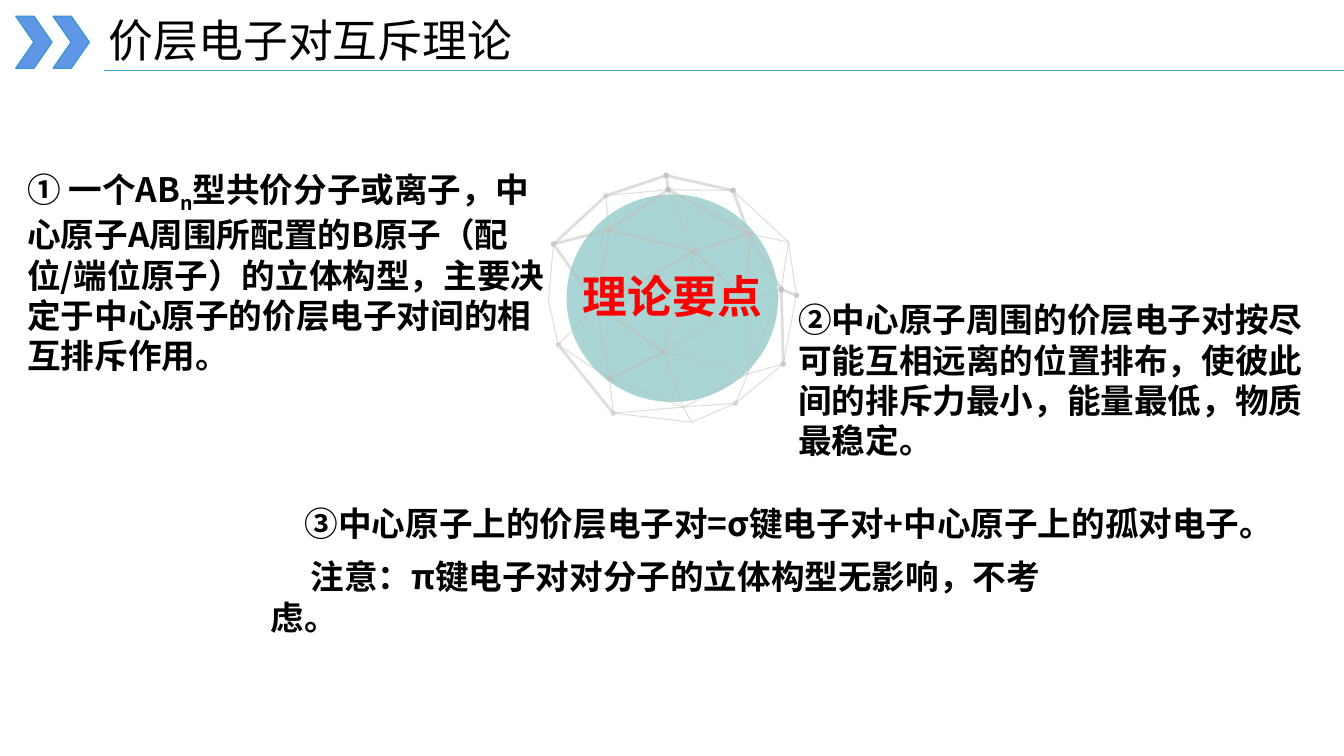
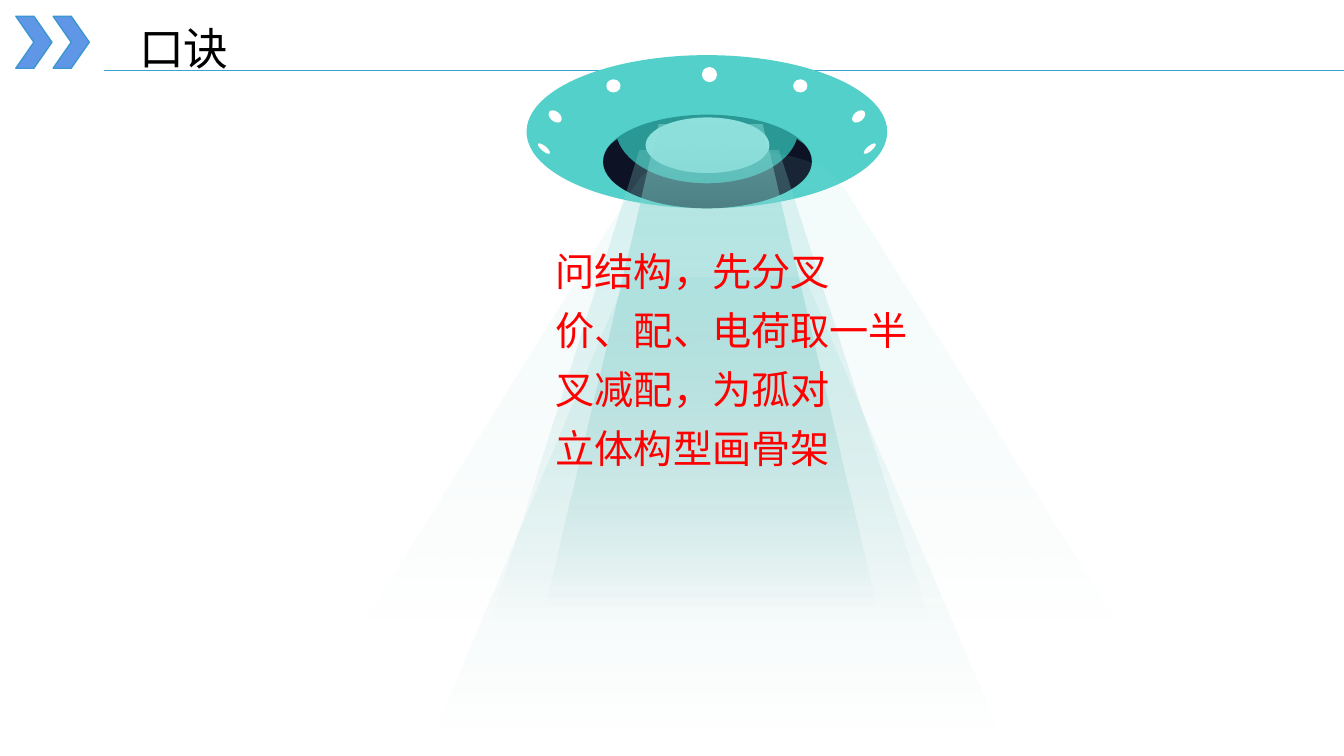
from pptx import Presentation
from pptx.dml.color import RGBColor
from pptx.enum.shapes import MSO_CONNECTOR, MSO_SHAPE
from pptx.enum.text import MSO_ANCHOR, MSO_AUTO_SIZE, PP_ALIGN
from pptx.oxml.ns import qn
from pptx.util import Cm, Pt
from lxml import etree

OVAL, CHEVRON = MSO_SHAPE.OVAL, MSO_SHAPE.CHEVRON
STRAIGHT = MSO_CONNECTOR.STRAIGHT
TOP, MIDDLE = MSO_ANCHOR.TOP, MSO_ANCHOR.MIDDLE
LEFT, CENTER, JUSTIFY = PP_ALIGN.LEFT, PP_ALIGN.CENTER, PP_ALIGN.JUSTIFY
FIXED = MSO_AUTO_SIZE.NONE

FONT = "Noto Sans CJK SC"
COLORS = {
    "ink": "000000", "red": "FF0000", "white": "FFFFFF",
    "arrow": "6096E6", "edge": "3B96D3", "rule": "3DA1D2",
    "net": "BFBFBF", "deep": "2A9995", "hull": "54D0CA",
    "lamp": "8EE0DC", "night": "0D1325",
}

# Mesh nodes in cm from the corner of the mesh
NODES = {
    "a": (4.65, 0.38), "b": (2.97, 0), "c": (6.25, 3.02), "d": (6.05, 1.68),
    "e": (1.63, 5.99), "f": (3.61, 6.22), "g": (4.72, 5.74), "h": (5.92, 4.75),
    "i": (0.25, 4.27), "j": (0.13, 1.73), "k": (0, 3.15), "l": (1.45, 0.51),
    "m": (3.02, 0.36), "n": (1.22, 3.28), "o": (1.55, 5.13), "p": (1.52, 1.37),
    "q": (2.9, 4.45), "r": (3.4, 5.84), "s": (3.68, 1.91), "t": (5.87, 2.87),
    "u": (5.05, 1.47), "v": (5.03, 5), "w": (5.03, 3.2),
}
# Each word is a run of nodes; a star is a dot at that end
EDGES = """*ab* *cda* efghc *ie* jki *bl* lma noe lpn* *qrf *msq* *bm* lj *ct*
*ua* *tu* *ht *qvh* *nq* *jn* *pj* *mp* *um* tdu *uwvt *su* *ns* *oin* *qo*
*twq* *gre orvg *sw* *ps*""".split()

# Outlines in cm from the corner of the saucer: pairs are corners,
# sixes are curves
RIM = [
    (6.81, 2.11), (6.99, 2.24), (7.11, 2.36, 7.19, 2.51, 7.19, 2.69),
    (7.19, 3.33, 5.99, 3.86, 4.55, 3.86), (3.1, 3.86, 1.93, 3.33, 1.93, 2.69),
    (1.93, 2.51, 2.01, 2.36, 2.13, 2.24), (2.29, 2.11), (2.29, 2.13),
    (2.51, 2.77, 3.43, 3.23, 4.55, 3.23), (5.66, 3.23, 6.6, 2.77, 6.81, 2.13),
]
RAYS = (
    ([(5.31, 2.41), (6.58, 2.41, 7.65, 2.77, 7.87, 3.25), (7.95, 3.28),
      (15.24, 14.88), (-4.45, 14.88), (2.74, 3.28), (2.77, 3.25),
      (3, 2.77, 4.06, 2.41, 5.31, 2.41)], 10),
    ([(2.51, 5.61), (7.01, 5.61), (12.01, 17.3), (-2.41, 17.3)], 17),
    ([(2.84, 2.41), (6.35, 2.41), (10.24, 14.5), (-0.99, 14.5)], 27),
    ([(3.33, 1.75), (5.94, 1.75), (8.84, 14), (0.46, 14)], 47),
)


def paint(color):
    return RGBColor.from_string(COLORS[color])


def fade(color, alpha):
    """Set the opacity, in percent, of one colour element."""
    etree.SubElement(color, qn("a:alpha")).set("val", str(alpha * 1000))


def write(frame, paras, size=24, color="ink", bold=False, align=LEFT,
          space=1.0, indent=0, anchor=TOP):
    """Fill a frame; text between underscores is set as subscript."""
    frame.word_wrap, frame.auto_size = True, FIXED
    frame.vertical_anchor = anchor
    for n, text in enumerate(paras):
        para = frame.add_paragraph() if n else frame.paragraphs[0]
        para.alignment, para.line_spacing = align, space
        para.space_before = para.space_after = Pt(0)
        props = para._p.get_or_add_pPr()
        props.set("marL", "0")
        props.set("indent", str(Cm(indent)))
        etree.SubElement(props, qn("a:buNone"))
        for k, part in enumerate(text.split("_")):
            run = para.add_run()
            run.text = part
            font = run.font
            font.name, font.size, font.bold = FONT, Pt(size), bold
            font.color.rgb = paint(color)
            rpr = run._r.get_or_add_rPr()
            etree.SubElement(rpr, qn("a:ea")).set("typeface", FONT)
            if k % 2:
                rpr.set("baseline", "-25000")


def place(shape, box):
    shape.left, shape.top, shape.width, shape.height = map(Cm, box)
    return shape


def label(slide, box, text, **style):
    write(slide.shapes.add_textbox(*map(Cm, box)).text_frame, [text], **style)


def solid(slide, kind, box, color, turn=0):
    shape = slide.shapes.add_shape(kind, *map(Cm, box))
    shape.shadow.inherit = False
    shape.fill.solid()
    shape.fill.fore_color.rgb = paint(color)
    shape.line.fill.background()
    shape.rotation = turn
    return shape


def stroke(slide, start, end, color, width):
    line = slide.shapes.add_connector(STRAIGHT, *map(Cm, start + end))
    line.line.color.rgb, line.line.width = paint(color), Pt(width)
    etree.SubElement(line.element.spPr, qn("a:effectLst"))
    return line


def trace(slide, left, top, parts, close=True):
    """Draw an outline of corners and curves, placed from left and top."""
    first, *rest = [(Cm(left + part[k]), Cm(top + part[k + 1]))
                    for part in parts for k in range(0, len(part), 2)]
    pen = slide.shapes.build_freeform(*first)
    pen.add_line_segments(rest, close=close)
    shape = pen.convert_to_shape()
    shape.shadow.inherit = False
    steps = iter(list(shape.element.iter(qn("a:lnTo"))))
    for part in parts[1:]:
        step = next(steps)
        if len(part) == 6:
            step.tag = qn("a:cubicBezTo")
            for _ in range(2):
                extra = next(steps)
                step.append(extra[0])
                extra.getparent().remove(extra)
    return shape


# Band shared by all slides, kept on the master
def band(prs, slide):
    parts = []
    for n in range(2):
        mark = solid(slide, CHEVRON, (0.4 + 0.94 * n, 0.41, 0.91, 1.31),
                     "arrow")
        mark.line.color.rgb, mark.line.width = paint("edge"), Pt(1)
        parts.append(mark)
    parts.append(stroke(slide, (2.62, 1.78), (33.87, 1.78), "rule", 0.5))
    for n, part in enumerate(parts):
        part.element.xpath(".//p:cNvPr")[0].set("id", str(20 + n))
        prs.slide_master.shapes.element.append(part.element)


def head(slide, box, text):
    title = place(slide.shapes.title, box)
    write(title.text_frame, [text], size=32, anchor=MIDDLE)


# Mesh globe with a caption
def globe(slide, left, top):
    disc = (left + 0.46, top + 0.48, 5.33, 5.23)
    ball = solid(slide, OVAL, disc, "deep")
    fade(next(ball.element.spPr.iter(qn("a:srgbClr"))), 40)
    for edge in EDGES:
        points = [NODES[c] for c in edge.strip("*")]
        if len(points) == 2:
            ends = [(left + x, top + y) for x, y in points]
            wire = stroke(slide, *ends, "net", 0)
        else:
            wire = trace(slide, left, top, points, close=False)
            wire.fill.background()
            wire.line.color.rgb, wire.line.width = paint("net"), Pt(0)
        pen = wire.line._get_or_add_ln()
        fade(next(pen.iter(qn("a:srgbClr"))), 50)
        for tag, dot in (("a:headEnd", edge[0]), ("a:tailEnd", edge[-1])):
            if dot == "*":
                etree.SubElement(pen, qn(tag), type="oval", w="sm", len="sm")
    label(slide, (left + 0.46, top + 1.9, 5.33, 1.96), "理论要点", size=32,
          color="red", bold=True, align=CENTER, space=1.25)


# Saucer seen from below
def saucer(slide, left, top, width=9.09):
    def disc(x, y, wide, high, color, turn=0):
        solid(slide, OVAL, (left + x, top + y, wide, high), color, turn)

    disc(0, 0, width, 3.86, "hull")
    disc(1.93, 1.5, 5.26, 2.34, "deep")
    disc(3, 1.57, 3.12, 1.4, "lamp")
    rim = trace(slide, left, top, RIM)
    rim.fill.solid()
    rim.fill.fore_color.rgb = paint("night")
    rim.line.fill.background()
    disc(4.42, 0.3, 0.38, 0.38, "white")
    for x, y, wide, high, turn in ((2.01, 0.61, 0.36, 0.33, 0),
                                   (0.53, 1.42, 0.38, 0.25, 40),
                                   (0.25, 2.29, 0.38, 0.13, 40)):
        disc(x, y, wide, high, "white", turn)
        disc(width - x - wide, y, wide, high, "white", -turn)


# Light beams below the saucer, from wide to narrow
def beams(slide, left, top):
    for parts, alpha in RAYS:
        ray = trace(slide, left, top, parts)
        ray.line.fill.background()
        ray.fill.gradient()
        ray.fill.gradient_angle = 270
        for stop, color in zip(ray.fill.gradient_stops, ("lamp", "deep")):
            stop.color.rgb = paint(color)
        tints = list(ray.element.spPr.iter(qn("a:srgbClr")))
        for tint, level in zip(tints, (alpha, 0)):
            fade(tint, level)


def theory(slide):
    head(slide, (2.49, 0.15, 14.91, 1.7), "价层电子对互斥理论")
    globe(slide, 13.82, 4.42)
    notes = (
        ((0.44, 4.12, 13.56, 5.38), 0,
         "① 一个AB_n_型共价分子或离子，中心原子A周围所配置的B原子（配位/端位原子）"
         "的立体构型，主要决定于中心原子的价层电子对间的相互排斥作用。"),
        ((19.87, 7.42, 14, 4.37), 0,
         "②中心原子周围的价层电子对按尽可能互相远离的位置排布，"
         "使彼此间的排斥力最小，能量最低，物质最稳定。"),
        ((7.43, 12.55, 25.9, 1.27), 0,
         "③中心原子上的价层电子对=σ键电子对+中心原子上的孤对电子。"),
        ((6.58, 13.89, 20.7, 2.3), 1,
         "注意：π键电子对对分子的立体构型无影响，不考虑。"),
    )
    for box, indent, text in notes:
        label(slide, box, text, bold=True, indent=indent)


def rhyme(slide):
    head(slide, (3.25, 0.34, 10.97, 1.7), "口诀")
    saucer(slide, 13.27, 1.39)
    beams(slide, 13.27, 1.39)
    verse = place(slide.placeholders[1], (13.75, 5.82, 10.39, 6.25))
    lines = ["问结构，先分叉", "价、配、电荷取一半", "叉减配，为孤对", "立体构型画骨架"]
    write(verse.text_frame, lines, size=28, color="red", align=JUSTIFY,
          space=1.25)
    slide.shapes.element.append(verse.element)


def main():
    prs = Presentation()
    prs.slide_width, prs.slide_height = Cm(33.87), Cm(19.05)
    first = prs.slides.add_slide(prs.slide_layouts[5])
    band(prs, first)
    theory(first)
    rhyme(prs.slides.add_slide(prs.slide_layouts[1]))
    prs.save("out.pptx")


if __name__ == "__main__":
    main()
